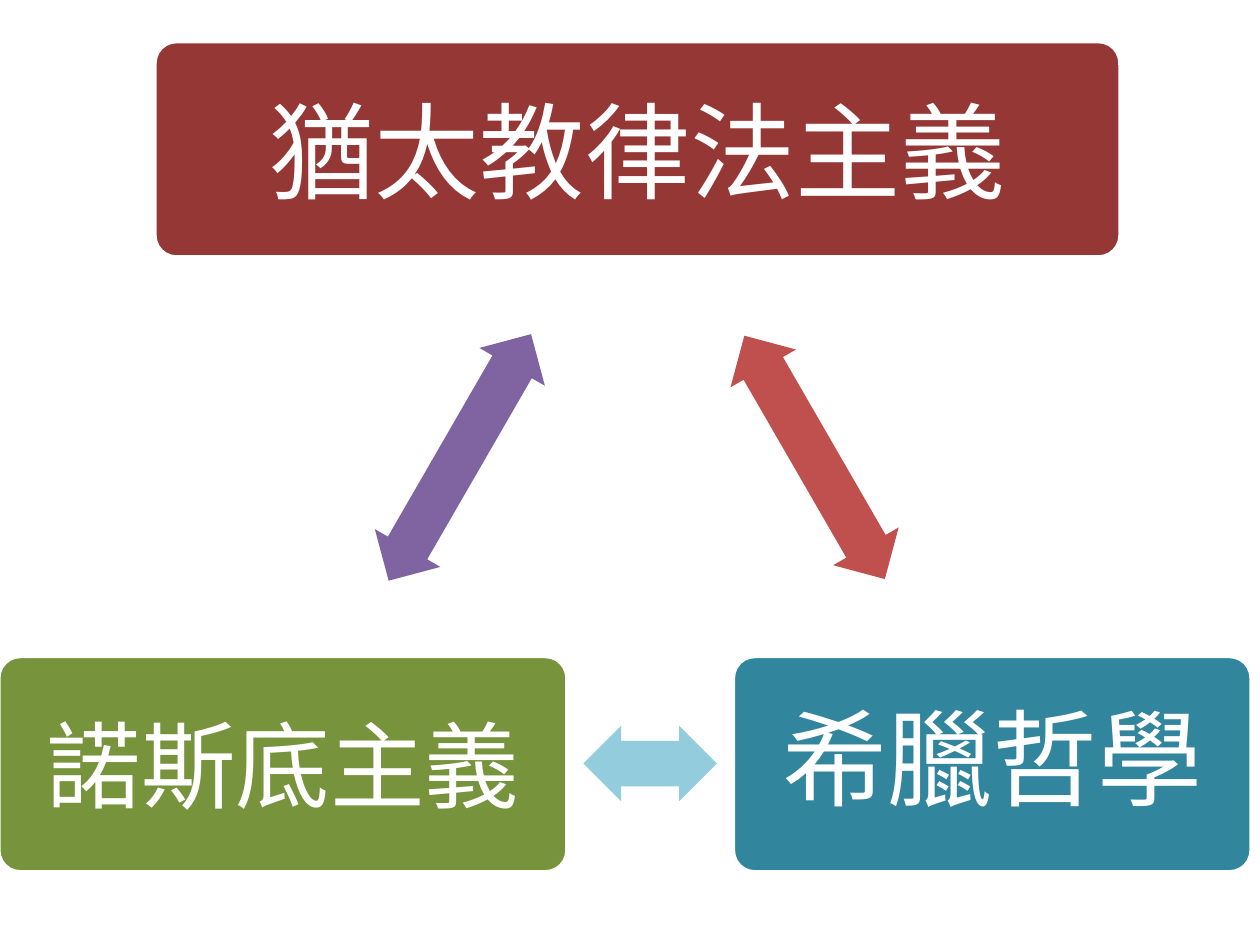
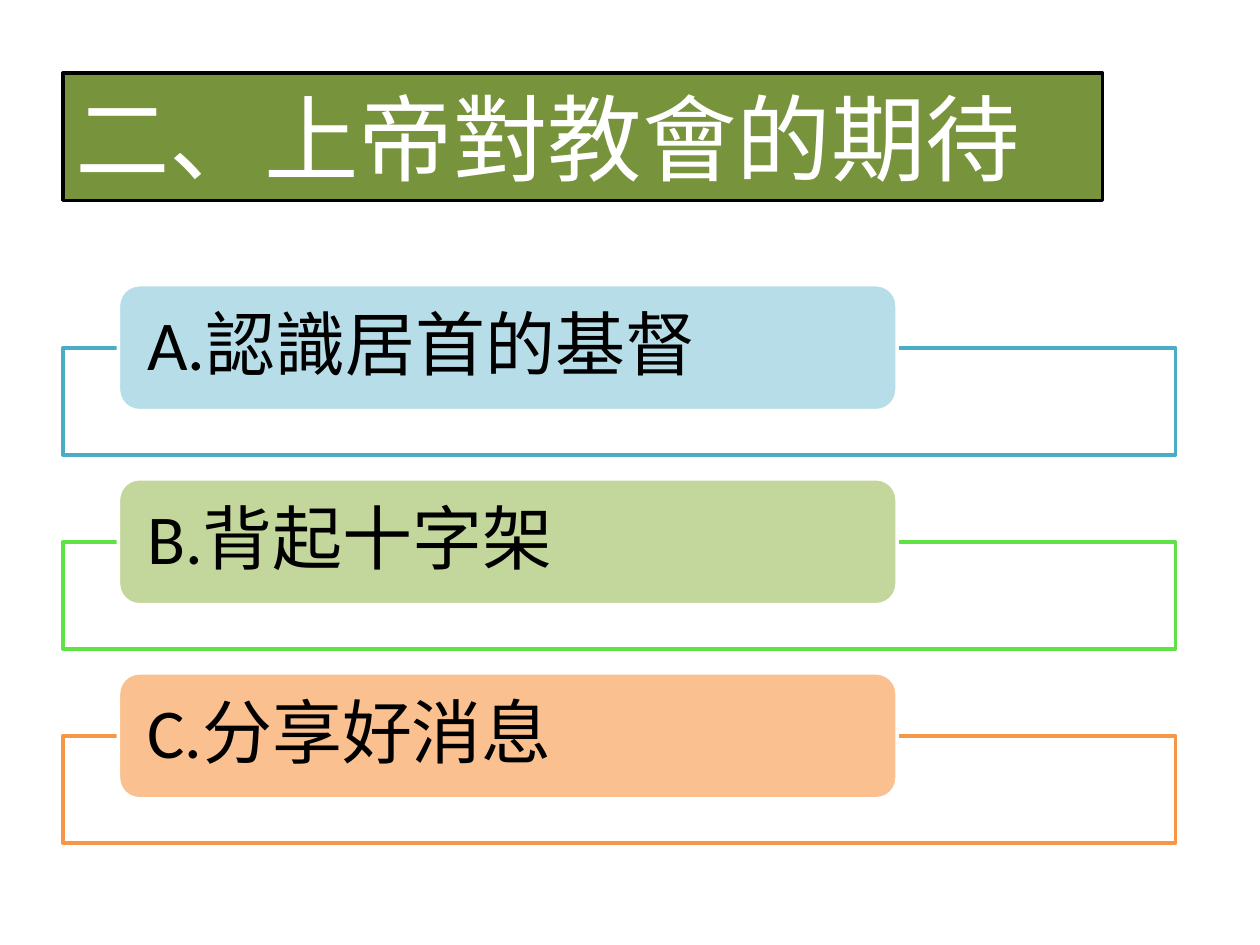
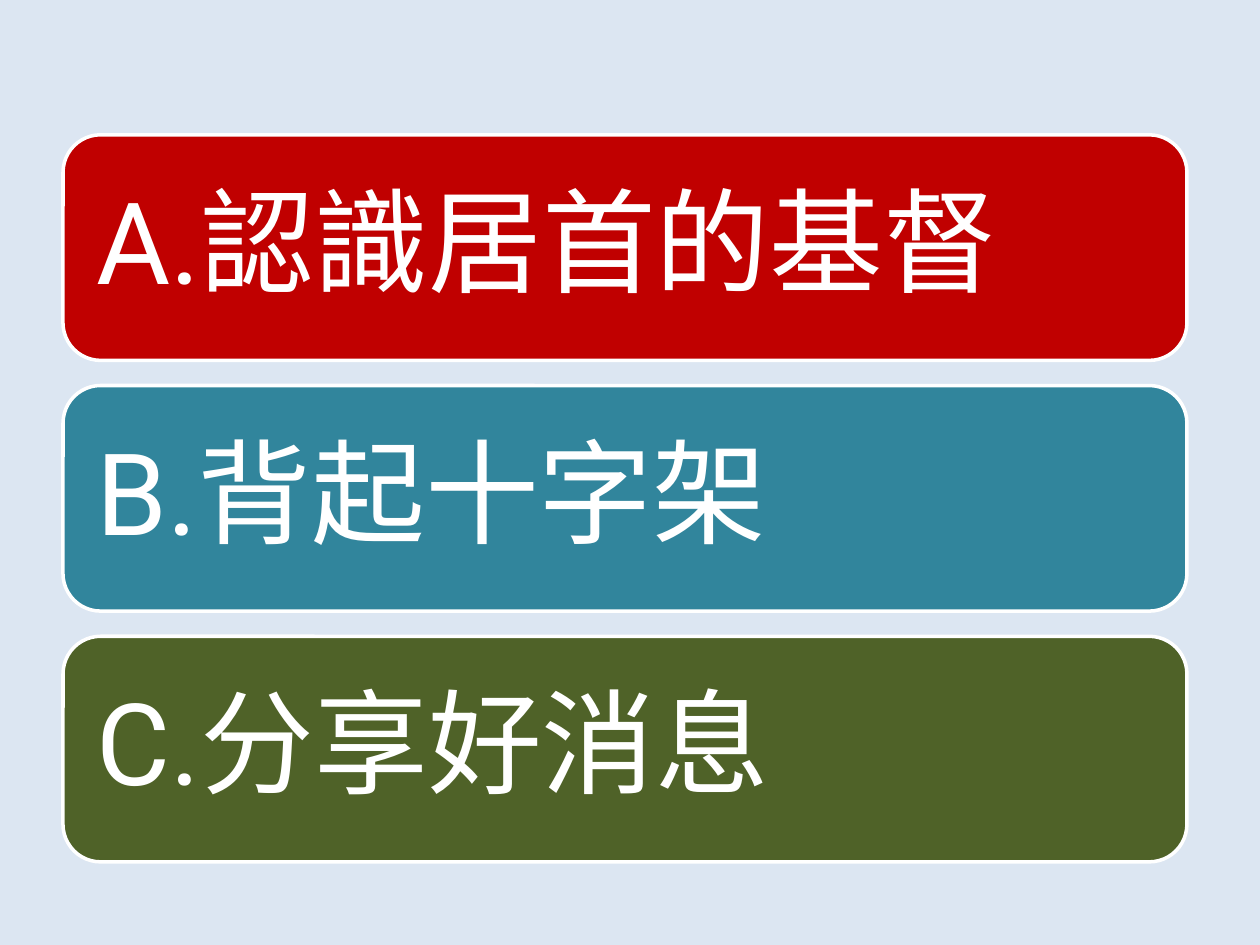
from dataclasses import dataclass

from pptx import Presentation
from pptx.dml.color import RGBColor
from pptx.enum.shapes import MSO_SHAPE
from pptx.enum.text import MSO_ANCHOR, PP_ALIGN
from pptx.util import Inches, Pt

ROUNDED = MSO_SHAPE.ROUNDED_RECTANGLE
RECTANGLE = MSO_SHAPE.RECTANGLE
DOUBLE_ARROW = MSO_SHAPE.LEFT_RIGHT_ARROW
MIDDLE = MSO_ANCHOR.MIDDLE
LEFT = PP_ALIGN.LEFT
CENTER = PP_ALIGN.CENTER


@dataclass(frozen=True)
class Theme:
    white: str = "FFFFFF"
    black: str = "000000"
    maroon: str = "953735"
    teal: str = "31859C"
    olive: str = "77933C"
    moss: str = "4F6228"
    crimson: str = "C00000"
    red: str = "C0504D"
    sky: str = "93CDDD"
    purple: str = "8064A2"
    aqua: str = "4BACC6"
    lime: str = "60E146"
    orange: str = "F79646"
    pale_aqua: str = "B7DEE8"
    pale_olive: str = "C3D69B"
    pale_orange: str = "FAC090"
    mist: str = "DCE6F2"
    heading_font: str = "Roboto"
    list_font: str = "Calibri"
    banner_size: int = 65
    idea_size: int = 60
    title_size: int = 54
    list_size: int = 40
    outline: int = 2


theme = Theme()


def add_block(slide, preset, left, top, width, height, fill, line=theme.white):
    block = slide.shapes.add_shape(
        preset, Inches(left), Inches(top), Inches(width), Inches(height))
    block.shadow.inherit = False
    block.fill.solid()
    block.fill.fore_color.rgb = RGBColor.from_string(fill)
    if line:
        block.line.color.rgb = RGBColor.from_string(line)
        block.line.width = Pt(theme.outline)
    else:
        block.line.fill.background()
    return block


def write(block, text, size, font=theme.heading_font, color=theme.white,
          align=LEFT, inset=0.18, spacing=0.9):
    frame = block.text_frame
    frame.word_wrap = True
    frame.vertical_anchor = MIDDLE
    frame.margin_left = frame.margin_right = Inches(inset)
    frame.margin_top = frame.margin_bottom = 0
    paragraph = frame.paragraphs[0]
    paragraph.text = text
    paragraph.alignment = align
    paragraph.line_spacing = spacing
    paragraph.font.size = Pt(size)
    paragraph.font.name = font
    paragraph.font.color.rgb = RGBColor.from_string(color)


prs = Presentation()
prs.slide_width = Inches(10)
prs.slide_height = Inches(7.5)
blank = prs.slide_layouts[6]
influences, expectations, summary = [prs.slides.add_slide(blank) for _ in range(3)]

idea_height = 1.71
lower_row = 5.21
ideas = [
    ("猶太教律法主義", 1.23, 0.33, 7.66, theme.maroon, theme.idea_size, 1.0),
    ("希臘哲學", 5.82, lower_row, 4.11, theme.teal, theme.idea_size, 0.9),
    ("諾斯底主義", -0.01, lower_row, 4.51, theme.olive, theme.title_size, 1.0),
]
for text, left, top, width, fill, size, spacing in ideas:
    idea = add_block(influences, ROUNDED, left, top, width, idea_height, fill)
    idea.adjustments[0] = 0.1
    write(idea, text, size, align=CENTER, inset=0.2, spacing=spacing)

exchanges = [
    (5.35, 3.33, 2.23, 60, theme.red),
    (4.63, 5.76, 1.06, 180, theme.sky),
    (2.52, 3.33, 2.26, 300, theme.purple),
]
for left, top, width, angle, fill in exchanges:
    exchange = add_block(influences, DOUBLE_ARROW, left, top, width, 0.6, fill, None)
    exchange.adjustments[0] = 0.6
    exchange.adjustments[1] = 0.5
    exchange.rotation = angle

margin = 0.5
title = add_block(expectations, RECTANGLE, margin, 0.58, 8.25, 1.01, theme.olive, theme.black)
write(title, "二、上帝對教會的期待", theme.title_size, inset=0.1, spacing=1.0)

points = [
    ("A.認識居首的基督", theme.pale_aqua, theme.aqua, theme.crimson),
    ("B.背起十字架", theme.pale_olive, theme.lime, theme.teal),
    ("C.分享好消息", theme.pale_orange, theme.orange, theme.moss),
]
summary.background.fill.solid()
summary.background.fill.fore_color.rgb = RGBColor.from_string(theme.mist)

for row, (text, tint, accent, banner_fill) in enumerate(points):
    label_top = 2.26 + 1.54 * row
    add_block(expectations, RECTANGLE, margin, label_top + 0.5, 8.83, 0.85, theme.white, accent)
    label = add_block(expectations, ROUNDED, 0.94, label_top, 6.18, 1, tint)
    write(label, text, theme.list_size, theme.list_font, theme.black)

    banner = add_block(summary, ROUNDED, margin, 1.07 + 1.99 * row, 8.92, 1.79, banner_fill)
    write(banner, text, theme.banner_size)

prs.save("out.pptx")
